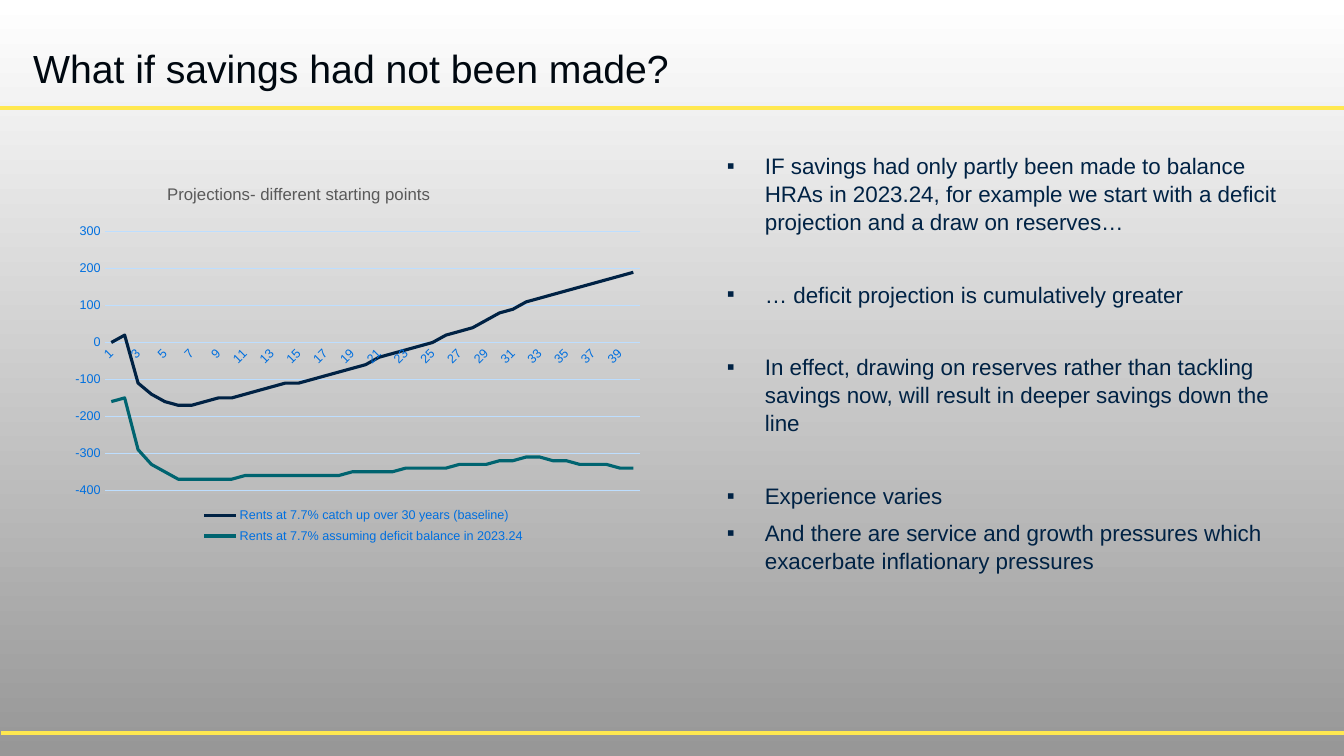
from lxml import etree
from pptx import Presentation, util as u
from pptx.chart.data import CategoryChartData
from pptx.dml.color import RGBColor
from pptx.enum import chart as ch, shapes, text
from pptx.oxml.ns import qn

PX = 9071  # EMU per px, at 100.8 px to the inch
COLORS = {"white": "FFFFFF", "grey": "979797", "rule": "FFE850", "title": "000810",
          "navy": "002244", "teal": "006470", "axis": "006FDF", "grid": "BDDEFF",
          "heading": "595959"}


def style(font, size, color):
    font.name, font.size, font.bold = "Arial", u.Pt(size), False
    font.color.rgb = RGBColor.from_string(COLORS[color])


def place(parent, index, inner=False, **fractions):
    """Give a chart part a manual layout, in fractions of the chart."""
    for old in parent.findall(qn("c:layout")):
        parent.remove(old)
    layout = etree.Element(qn("c:layout"))
    manual = etree.SubElement(layout, qn("c:manualLayout"))
    settings = {"layoutTarget": "inner"} if inner else {}
    settings |= {"xMode": "edge", "yMode": "edge"} | fractions
    for tag, value in settings.items():
        etree.SubElement(manual, qn("c:" + tag)).set("val", str(value))
    parent.insert(index, layout)


prs = Presentation()
prs.slide_width, prs.slide_height = 1344 * PX, 756 * PX
slide = prs.slides.add_slide(prs.slide_layouts[5])

# Background, white down to grey
backdrop = slide.background.fill
backdrop.gradient()
backdrop.gradient_angle = 270
for stop, name in zip(backdrop.gradient_stops, ("white", "grey")):
    stop.color.rgb = RGBColor.from_string(COLORS[name])

# Yellow rules
for left, y in ((0, 108), (1, 733)):
    rule = slide.shapes.add_connector(shapes.MSO_CONNECTOR.STRAIGHT,
                                      left * PX, y * PX, 1344 * PX, y * PX)
    rule.line.color.rgb = RGBColor.from_string(COLORS["rule"])
    rule.line.width = u.Pt(3)
    etree.SubElement(rule._element.spPr, qn("a:effectLst"))

# Title
title = slide.shapes.title
title.left, title.top, title.width, title.height = (n * PX for n in (23, 22, 890, 75))
title.text_frame.text = "What if savings had not been made?"
title.text_frame.vertical_anchor = text.MSO_ANCHOR.BOTTOM
heading = title.text_frame.paragraphs[0]
heading.alignment = text.PP_ALIGN.LEFT
heading.line_spacing = 0.9
style(heading.runs[0].font, 28, "title")

# Chart of the two projections
projections = CategoryChartData(number_format="#,##0")
projections.categories = [str(year) for year in range(1, 41)]
projections.add_series("Rents at 7.7% catch up over 30 years (baseline)", (
    0, 20, -110, -140, -160, -170, -170, -160, -150, -150,
    -140, -130, -120, -110, -110, -100, -90, -80, -70, -60,
    -40, -30, -20, -10, 0, 20, 30, 40, 60, 80,
    90, 110, 120, 130, 140, 150, 160, 170, 180, 190))
projections.add_series("Rents at 7.7% assuming deficit balance in 2023.24", (
    -160, -150, -290, -330, -350, -370, -370, -370, -370, -370,
    -360, -360, -360, -360, -360, -360, -360, -360, -350, -350,
    -350, -350, -340, -340, -340, -340, -330, -330, -330, -320,
    -320, -310, -310, -320, -320, -330, -330, -330, -340, -340))
chart = slide.shapes.add_chart(ch.XL_CHART_TYPE.LINE, 63 * PX, 169 * PX,
                               595 * PX, 392 * PX, projections).chart
style(chart.font, 10, "navy")
chart.plots[0].vary_by_categories = False
for series, name in zip(chart.plots[0].series, ("navy", "teal")):
    series.smooth = False
    series.format.line.color.rgb = RGBColor.from_string(COLORS[name])
    series.format.line.width = u.Pt(2.25)
place(chart._chartSpace.chart.plotArea, 0, inner=True, x=0.07, y=0.16, w=0.9, h=0.66)

# Chart heading and legend
chart.has_title = True
chart.chart_title.text_frame.text = "Projections- different starting points"
style(chart.chart_title.text_frame.paragraphs[0].runs[0].font, 12, "heading")
place(chart.chart_title._element, 1, x=0.17, y=0.03)
chart.has_legend = True
chart.legend.position = ch.XL_LEGEND_POSITION.BOTTOM
chart.legend.include_in_layout = False
style(chart.legend.font, 9, "axis")
place(chart.legend._element, 1, x=0.22, y=0.85, w=0.57, h=0.12)

# Axes
years, amounts = chart.category_axis, chart.value_axis
for axis in (years, amounts):
    axis.major_tick_mark = axis.minor_tick_mark = ch.XL_TICK_MARK.NONE
    style(axis.tick_labels.font, 9, "axis")
amounts.minimum_scale, amounts.maximum_scale, amounts.major_unit = -400, 300, 100
amounts.tick_labels.number_format = "#,##0"
amounts.tick_labels.number_format_is_linked = False
amounts.format.line.fill.background()
for line in (years.format.line, amounts.major_gridlines.format.line):
    line.color.rgb = RGBColor.from_string(COLORS["grid"])
    line.width = u.Pt(0.75)
years._element.find(qn("c:txPr")).find(qn("a:bodyPr")).set("rot", "-2700000")
skip = etree.Element(qn("c:tickLblSkip"))
skip.set("val", "2")
years._element.find(qn("c:noMultiLvlLbl")).addprevious(skip)

# Bullet points, each with its space before in points
points = (
    ("IF savings had only partly been made to balance HRAs in 2023.24, for example "
     "we start with a deficit projection and a draw on reserves…", 0),
    ("… deficit projection is cumulatively greater", 32),
    ("In effect, drawing on reserves rather than tackling savings now, will result in "
     "deeper savings down the line", 32),
    ("Experience varies", 32),
    ("And there are service and growth pressures which exacerbate inflationary pressures",
     6.5),
)
body = slide.shapes.add_textbox(711 * PX, 146 * PX, 595 * PX, 549 * PX).text_frame
body.word_wrap = True
for number, (wording, gap) in enumerate(points):
    point = body.add_paragraph() if number else body.paragraphs[0]
    point.text = wording
    point.line_spacing = 1.04
    point.space_before = u.Pt(gap)
    props = point._p.get_or_add_pPr()
    props.set("marL", str(44 * PX))
    props.set("indent", str(-38 * PX))
    etree.SubElement(props, qn("a:buFont")).set("typeface", "Arial")
    etree.SubElement(props, qn("a:buChar")).set("char", "▪")
    style(point.runs[0].font, 16, "navy")

prs.save("out.pptx")
